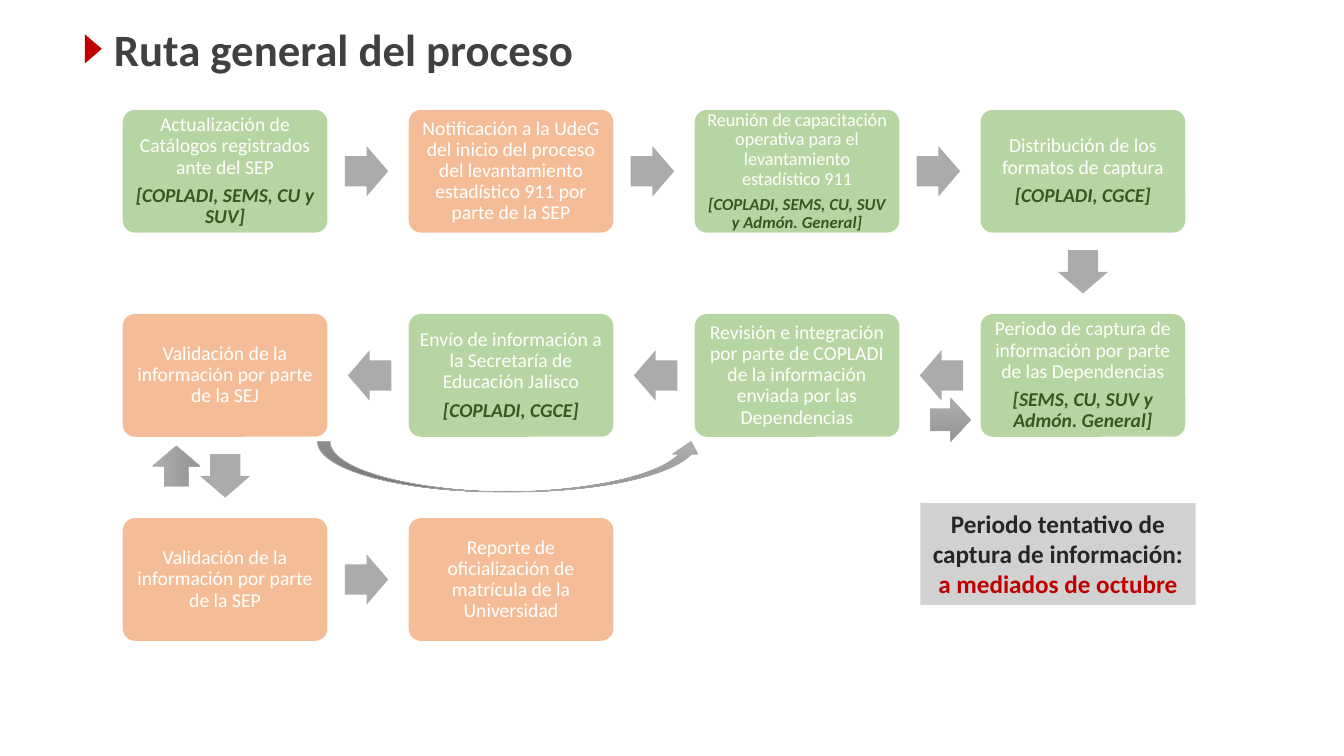
"""Builds the slide with the general route of the process."""
from dataclasses import dataclass, field
from typing import Any

from lxml.etree import SubElement
from pptx import Presentation
from pptx.dml.color import RGBColor
from pptx.enum.shapes import MSO_SHAPE as Kind
from pptx.enum.text import MSO_ANCHOR as Anchor, PP_ALIGN as Align
from pptx.oxml.ns import qn
from pptx.util import Pt

LEFT, TOP, WIDE, HIGH = 87.7, 78.5, 146.2, 87.7
COL, ROW = 204.25, 145.8
ARROW_W, ARROW_H, BACK = 31, 36, 1.1
GREEN, ORANGE, GREY = "70AD47", "ED7D31", "A5A5A5"
LABEL = {"size": Pt(14), "bold": False, "italic": False}
OWNER = {"size": Pt(14), "bold": True, "italic": True}
NOTE = {"size": Pt(18), "bold": True}
STEP_PAR = {"alignment": Align.CENTER, "line_spacing": 0.9, "space_after": Pt(5)}


@dataclass
class Step:
    col: int
    row: int
    fill: str
    label: str
    owner: str = ""
    pad: float = 4.3
    sizes: tuple[int, int] = (14, 14)

    def mid(self) -> tuple[float, float]:
        return LEFT + self.col * COL + WIDE / 2, TOP + self.row * ROW + HIGH / 2


@dataclass
class Item:
    kind: Any
    x: float
    y: float
    w: float
    h: float
    fill: str = ""
    turn: float = 0
    alpha: int = 100
    adj: list[float] = field(default_factory=list)


STEPS = [
    Step(0, 0, GREEN, "Actualización de Catálogos registrados ante del SEP",
         "[COPLADI, SEMS, CU y SUV]"),
    Step(1, 0, ORANGE, "Notificación a la UdeG del inicio del proceso del "
         "levantamiento estadístico 911 por parte de la SEP"),
    Step(2, 0, GREEN, "Reunión de capacitación operativa para el levantamiento "
         "estadístico 911", "[COPLADI, SEMS, CU, SUV y Admón. General]", 3.6, (13, 12)),
    Step(3, 0, GREEN, "Distribución de los formatos de captura", "[COPLADI, CGCE]"),
    Step(3, 1, GREEN, "Periodo de captura de información por parte de las Dependencias",
         "[SEMS, CU, SUV y Admón. General]"),
    Step(2, 1, GREEN, "Revisión e integración por parte de COPLADI de la información "
         "enviada por las Dependencias"),
    Step(1, 1, GREEN, "Envío de información a la Secretaría de Educación Jalisco",
         "[COPLADI, CGCE]"),
    Step(0, 1, ORANGE, "Validación de la información por parte de la SEJ"),
    Step(0, 2, ORANGE, "Validación de la información por parte de la SEP"),
    Step(1, 2, ORANGE, "Reporte de oficialización de matrícula de la Universidad"),
]
RETURNS = [
    Item(Kind.RIGHT_ARROW, 664.6, 284.4, 28.8, 31),
    Item(Kind.RIGHT_ARROW, 111.6, 316.1, 28.8, 33.8, turn=270),
    Item(Kind.CURVED_UP_ARROW, 226.8, 315.4, 275.8, 36),
]


def rgb(code: str) -> RGBColor:
    return RGBColor.from_string(code)


def put(obj: Any, vals: dict[str, Any]) -> None:
    for name, val in vals.items():
        setattr(obj, name, val)


def draw(slide: Any, item: Item) -> Any:
    shape = slide.shapes.add_shape(item.kind, Pt(item.x), Pt(item.y), Pt(item.w), Pt(item.h))
    shape.shadow.inherit = False
    shape.rotation = item.turn
    for spot, val in enumerate(item.adj):
        shape.adjustments[spot] = val
    if item.fill:
        shape.fill.solid()
        shape.fill.fore_color.rgb = rgb(item.fill)
        shape.line.fill.background()
    if item.alpha < 100:
        tint = shape.fill._xPr.find(".//" + qn("a:srgbClr"))
        SubElement(tint, qn("a:alpha"), val=str(item.alpha * 1000))
    return shape


def write(par: Any, text: str, look: dict[str, Any], font: dict[str, Any], hue: str) -> None:
    put(par, look)
    run = par.add_run()
    run.text = text
    put(run.font, {"name": "Calibri", **font})
    run.font.color.rgb = rgb(hue)


def add_step(slide: Any, step: Step) -> None:
    x, y = step.mid()
    box = draw(slide, Item(Kind.ROUNDED_RECTANGLE, x - WIDE / 2, y - HIGH / 2, WIDE, HIGH,
                           step.fill, alpha=50, adj=[0.1]))
    frame = box.text_frame
    sides = ("left", "right", "top", "bottom")
    put(frame, {f"margin_{side}": Pt(step.pad) for side in sides})
    put(frame, {"word_wrap": True, "vertical_anchor": Anchor.MIDDLE})
    big, small = step.sizes
    write(frame.paragraphs[0], step.label, STEP_PAR, LABEL | {"size": Pt(big)}, "FFFFFF")
    if step.owner:
        write(frame.add_paragraph(), step.owner, STEP_PAR, OWNER | {"size": Pt(small)}, "385723")


def add_arrow(slide: Any, start: Step, end: Step) -> None:
    (x1, y1), (x2, y2) = start.mid(), end.mid()
    dx, dy = end.col - start.col, end.row - start.row
    turn = 90 if dy else 0 if dx > 0 else 180
    x, y = (x1 + x2) / 2 - BACK * dx, (y1 + y2) / 2 - BACK * dy
    draw(slide, Item(Kind.RIGHT_ARROW, x - ARROW_W / 2, y - ARROW_H / 2, ARROW_W, ARROW_H,
                     "ABABAB", turn, adj=[0.6, 0.5]))


def add_return(slide: Any, item: Item) -> None:
    shape = draw(slide, item)
    shape.fill.gradient()
    shape.fill.gradient_angle = 270
    for stop, hue in zip(shape.fill.gradient_stops, ("AFAFAF", "939393")):
        stop.color.rgb = rgb(hue)
    shape.line.color.rgb = rgb(GREY)
    shape.line.width = Pt(0.5)


def add_title(slide: Any) -> None:
    title = slide.shapes.title
    put(title, {"left": Pt(67), "top": Pt(10), "width": Pt(828), "height": Pt(54)})
    frame = title.text_frame
    put(frame, {"margin_left": Pt(14.4), "vertical_anchor": Anchor.MIDDLE, "word_wrap": True})
    write(frame.paragraphs[0], "Ruta general del proceso",
          {"alignment": Align.LEFT, "line_spacing": 0.9}, {"size": Pt(32), "bold": True}, "404040")
    draw(slide, Item(Kind.ISOSCELES_TRIANGLE, 56.2, 28.8, 20.9, 12.2, "C00000", 90))


def add_note(slide: Any) -> None:
    box = draw(slide, Item(Kind.RECTANGLE, 657.4, 359.3, 196.6, 72.7, GREY, alpha=50))
    frame = box.text_frame
    put(frame, {"word_wrap": True, "vertical_anchor": Anchor.TOP})
    look = {"alignment": Align.CENTER}
    write(frame.paragraphs[0], "Periodo tentativo de captura de información:", look, NOTE, "262626")
    write(frame.add_paragraph(), "a mediados de octubre", look, NOTE, "C00000")


def main() -> None:
    deck = Presentation()
    put(deck, {"slide_width": Pt(960), "slide_height": Pt(540)})
    slide = deck.slides.add_slide(deck.slide_layouts[5])
    add_title(slide)
    for step in STEPS:
        add_step(slide, step)
    for start, end in zip(STEPS, STEPS[1:]):
        add_arrow(slide, start, end)
    add_note(slide)
    for item in RETURNS:
        add_return(slide, item)
    deck.save("out.pptx")


if __name__ == "__main__":
    main()
